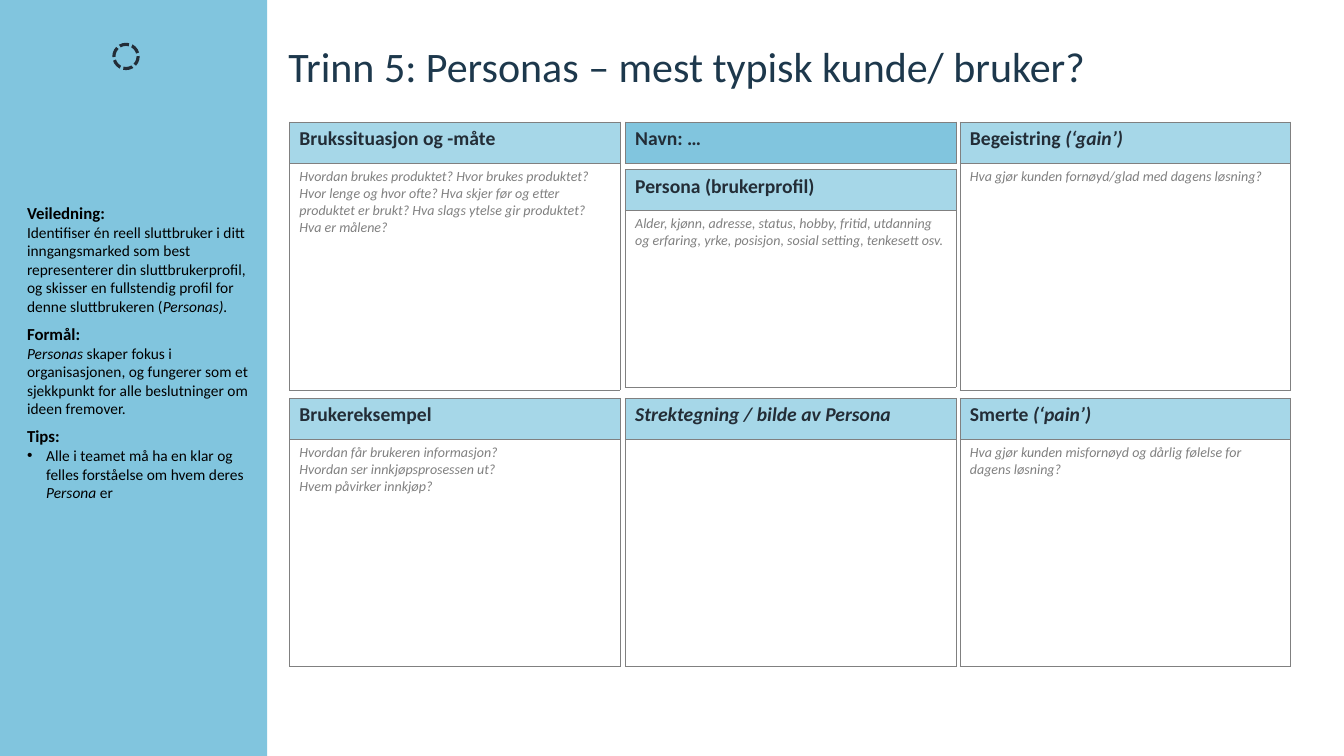
from lxml import etree
from pptx import Presentation
from pptx.dml.color import RGBColor
from pptx.enum.dml import MSO_LINE
from pptx.enum.shapes import MSO_SHAPE
from pptx.enum.text import MSO_ANCHOR, MSO_AUTO_SIZE, PP_ALIGN
from pptx.oxml import parse_xml
from pptx.oxml.ns import nsdecls, qn
from pptx.util import Inches, Pt

RECT, OVAL = MSO_SHAPE.RECTANGLE, MSO_SHAPE.OVAL
DASH = MSO_LINE.SQUARE_DOT
TOP, LEFT = MSO_ANCHOR.TOP, PP_ALIGN.LEFT
NO_FIT, GROW = MSO_AUTO_SIZE.NONE, MSO_AUTO_SIZE.SHAPE_TO_FIT_TEXT
COLORS = {"panel": "81C5DE", "header": "A6D7E8", "title": "1D384C",
          "dark": "232D37", "grey": "808080", "black": "000000"}


def rgb(name):
    return RGBColor.from_string(COLORS[name])


def write(p, text, size, color, bold=False, after=0, bullet=False):
    p.alignment = LEFT
    p.space_after = Pt(after)
    if bullet:
        pPr = p._p.get_or_add_pPr()
        pPr.set("marL", str(Inches(0.19)))
        pPr.set("indent", str(-Inches(0.19)))
        etree.SubElement(pPr, qn("a:buFont")).set("typeface", "Arial")
        etree.SubElement(pPr, qn("a:buChar")).set("char", "•")
    for i, part in enumerate(text.split("_")):
        if part:
            r = p.add_run()
            r.text = part
            r.font.name = "Calibri"
            r.font.size = Pt(size)
            r.font.bold = bold
            r.font.italic = i % 2 == 1
            r.font.color.rgb = rgb(color)


prs = Presentation()
prs.slide_width, prs.slide_height = Inches(13.33), Inches(7.5)
slide = prs.slides.add_slide(prs.slide_layouts[5])

title = slide.shapes.title
title.left, title.top = Inches(2.86), Inches(0.46)
title.width, title.height = Inches(9.05), Inches(0.64)
tf = title.text_frame
tf.margin_left = tf.margin_right = tf.margin_top = tf.margin_bottom = 0
tf.vertical_anchor = TOP
tf.auto_size = NO_FIT
tf.word_wrap = True
p = tf.paragraphs[0]
p.line_spacing = 0.9
write(p, "Trinn 5: Personas – mest typisk kunde/ bruker?", 30, "title")

panel = slide.shapes.add_shape(RECT, 0, 0, Inches(2.65), prs.slide_height)
panel.shadow.inherit = False
panel.fill.solid()
panel.fill.fore_color.rgb = rgb("panel")
panel.line.fill.background()

guide = [
    ("Veiledning:", "Identifiser én reell sluttbruker i ditt inngangsmarked som best "
     "representerer din sluttbrukerprofil, og skisser en fullstendig profil for denne "
     "sluttbrukeren (_Personas)._", 6, False),
    ("Formål:", "_Personas _skaper fokus i organisasjonen, og fungerer som et sjekkpunkt "
     "for alle beslutninger om ideen fremover.", 6, False),
    ("Tips:", "Alle i teamet må ha en klar og felles forståelse om hvem deres "
     "_Persona _er", 0, True),
]
tf = slide.shapes.add_textbox(Inches(0.17), Inches(1.96), Inches(2.4), Inches(3.1)).text_frame
tf.word_wrap = True
tf.auto_size = GROW
for i, (heading, body, after, bullet) in enumerate(guide):
    p = tf.add_paragraph() if i else tf.paragraphs[0]
    write(p, heading, 12, "black", bold=True)
    write(tf.add_paragraph(), body, 11, "black", after=after, bullet=bullet)

COLUMNS = (2.87, 6.2, 9.52)
UPPER, LOWER = 1.21, 3.95
COL_W, HEAD_H, BODY_H = 3.28, 0.41, 2.25
cards = [
    (0, UPPER, BODY_H, "header", "Brukssituasjon og -måte",
     ["_Hvordan brukes produktet? Hvor brukes produktet?_",
      "_Hvor lenge og hvor ofte? Hva skjer før og etter produktet er brukt? "
      "Hva slags ytelse gir produktet?_",
      "_Hva er målene?_"]),
    (1, UPPER, 0, "panel", "Navn: …", []),
    (0, LOWER, BODY_H, "header", "Brukereksempel",
     ["_Hvordan får brukeren informasjon?_", "_Hvordan ser innkjøpsprosessen ut?_",
      "_Hvem påvirker innkjøp?_"]),
    (2, UPPER, BODY_H, "header", "Begeistring _(‘gain’)_",
     ["_Hva gjør kunden fornøyd/glad med dagens løsning?_"]),
    (2, LOWER, BODY_H, "header", "Smerte _(‘pain’)_",
     ["_Hva gjør kunden misfornøyd og dårlig følelse for dagens løsning?_"]),
    (1, 1.68, 1.75, "header", "Persona (brukerprofil)",
     ["_Alder, kjønn, adresse, status, hobby, fritid, utdanning og erfaring, yrke, "
      "posisjon, sosial setting, tenkesett osv._"]),
    (1, LOWER, BODY_H, "header", "_Strektegning / bilde av Persona_", []),
]
for col, top, body_h, fill, heading, lines in cards:
    heights = [HEAD_H, body_h] if body_h else [HEAD_H]
    table = slide.shapes.add_table(len(heights), 1, Inches(COLUMNS[col]), Inches(top),
                                   Inches(COL_W), Inches(sum(heights))).table
    table.first_row = table.horz_banding = False
    for row, height in enumerate(heights):
        table.rows[row].height = Inches(height)
        cell = table.cell(row, 0)
        cell.margin_left = cell.margin_right = Inches(0.1)
        cell.margin_top = cell.margin_bottom = Inches(0.05)
        if row:
            cell.fill.background()
        else:
            cell.fill.solid()
            cell.fill.fore_color.rgb = rgb(fill)
            write(cell.text_frame.paragraphs[0], heading, 14, "dark", bold=True)
        tcPr = cell._tc.get_or_add_tcPr()
        for i, side in enumerate(("lnL", "lnR", "lnT", "lnB")):
            tcPr.insert(i, parse_xml(
                f'<a:{side} {nsdecls("a")} w="{Pt(0.5)}"><a:solidFill>'
                f'<a:srgbClr val="{COLORS["grey"]}"/></a:solidFill></a:{side}>'))
    for i, line in enumerate(lines):
        tf = table.cell(1, 0).text_frame
        p = tf.add_paragraph() if i else tf.paragraphs[0]
        write(p, line, 10, "grey")

ring = slide.shapes.add_shape(OVAL, Inches(1.13), Inches(0.44), Inches(0.24), Inches(0.24))
ring.shadow.inherit = False
ring.fill.background()
ring.line.color.rgb = rgb("dark")
ring.line.width = Pt(2.25)
ring.line.dash_style = DASH
ring.line._ln.find(qn("a:prstDash")).set("val", "sysDash")

prs.save("out.pptx")
